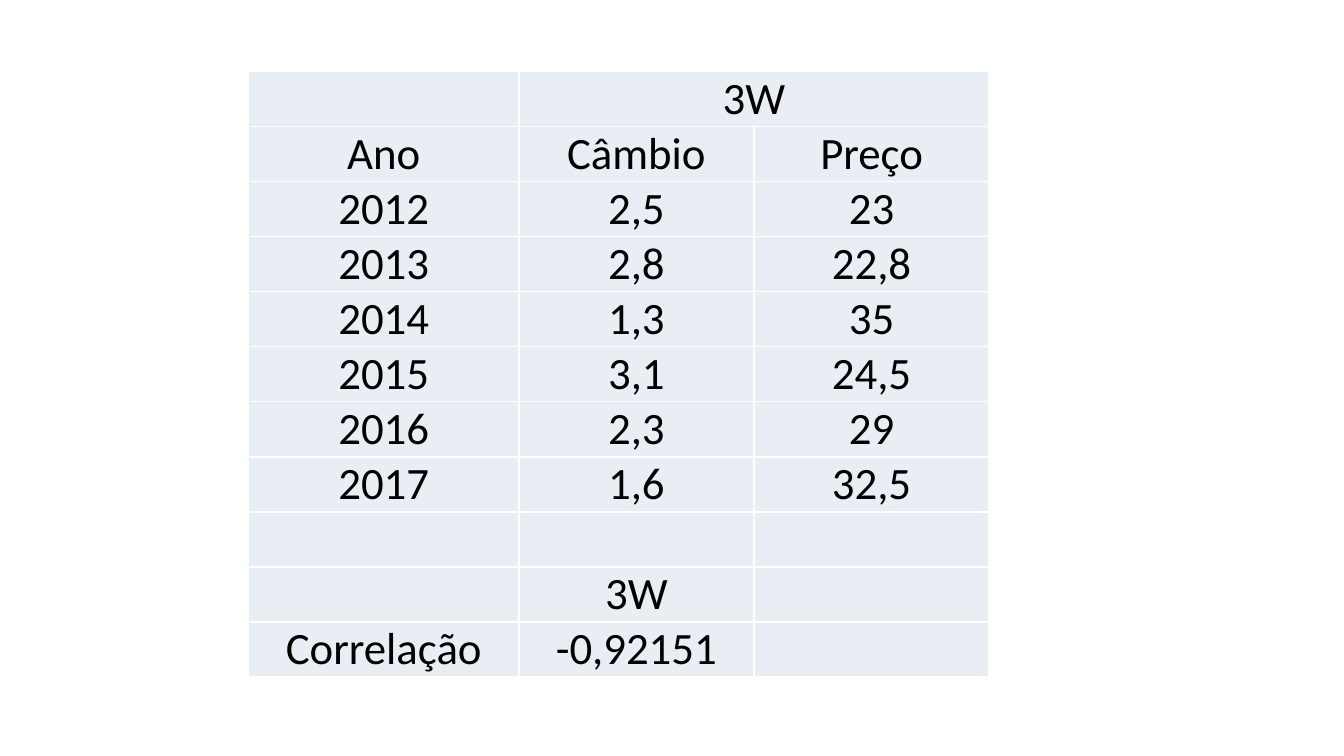
from lxml import etree
from pptx import Presentation
from pptx.dml.color import RGBColor
from pptx.enum.text import MSO_ANCHOR, PP_ALIGN
from pptx.oxml.ns import qn
from pptx.util import Inches, Pt

CENTER = PP_ALIGN.CENTER
BOTTOM = MSO_ANCHOR.BOTTOM

COLORS = {"cell": "E9EDF4", "border": "FFFFFF", "text": "000000"}
CELL_FORMAT = {
    "margin_left": Inches(0.01),
    "margin_right": Inches(0.01),
    "margin_top": 0,
    "margin_bottom": 0,
    "vertical_anchor": BOTTOM,
}
FONT_FORMAT = {"name": "Calibri", "size": Pt(24), "bold": False}

COLUMN_WIDTHS = [2.01, 1.75, 1.75]
ROW_HEIGHT = 0.41
EXCHANGE_AND_PRICE = [
    ("", "3W", ""),
    ("Ano", "Câmbio", "Preço"),
    ("2012", "2,5", "23"),
    ("2013", "2,8", "22,8"),
    ("2014", "1,3", "35"),
    ("2015", "3,1", "24,5"),
    ("2016", "2,3", "29"),
    ("2017", "1,6", "32,5"),
    ("", "", ""),
    ("", "3W", ""),
    ("Correlação", "-0,92151", ""),
]


def apply_format(target, values):
    for name, value in values.items():
        setattr(target, name, value)


def add_borders(cell):
    properties = cell._tc.get_or_add_tcPr()
    for side in ("a:lnL", "a:lnR", "a:lnT", "a:lnB"):
        line = etree.SubElement(properties, qn(side), w=str(Pt(1)))
        fill = etree.SubElement(line, qn("a:solidFill"))
        etree.SubElement(fill, qn("a:srgbClr"), val=COLORS["border"])


def fill_cell(cell, text):
    apply_format(cell, CELL_FORMAT)
    add_borders(cell)
    cell.fill.solid()
    cell.fill.fore_color.rgb = RGBColor.from_string(COLORS["cell"])
    if text:
        paragraph = cell.text_frame.paragraphs[0]
        paragraph.alignment = CENTER
        run = paragraph.add_run()
        run.text = text
        apply_format(run.font, FONT_FORMAT)
        run.font.color.rgb = RGBColor.from_string(COLORS["text"])


def add_correlation_table(slide):
    row_count = len(EXCHANGE_AND_PRICE)
    table = slide.shapes.add_table(
        row_count, len(COLUMN_WIDTHS), Inches(1.85), Inches(0.53),
        Inches(sum(COLUMN_WIDTHS)), Inches(ROW_HEIGHT * row_count),
    ).table
    apply_format(table, {"first_row": False, "horz_banding": False})
    for column, width in zip(table.columns, COLUMN_WIDTHS):
        column.width = Inches(width)
    for row, values in zip(table.rows, EXCHANGE_AND_PRICE):
        row.height = Inches(ROW_HEIGHT)
        for cell, text in zip(row.cells, values):
            fill_cell(cell, text)
    table.cell(0, 1).merge(table.cell(0, 2))


def main():
    presentation = Presentation()
    presentation.slide_width = Inches(10)
    presentation.slide_height = Inches(10) * 9 // 16
    slide = presentation.slides.add_slide(presentation.slide_layouts[6])
    add_correlation_table(slide)
    presentation.save("out.pptx")


if __name__ == "__main__":
    main()
